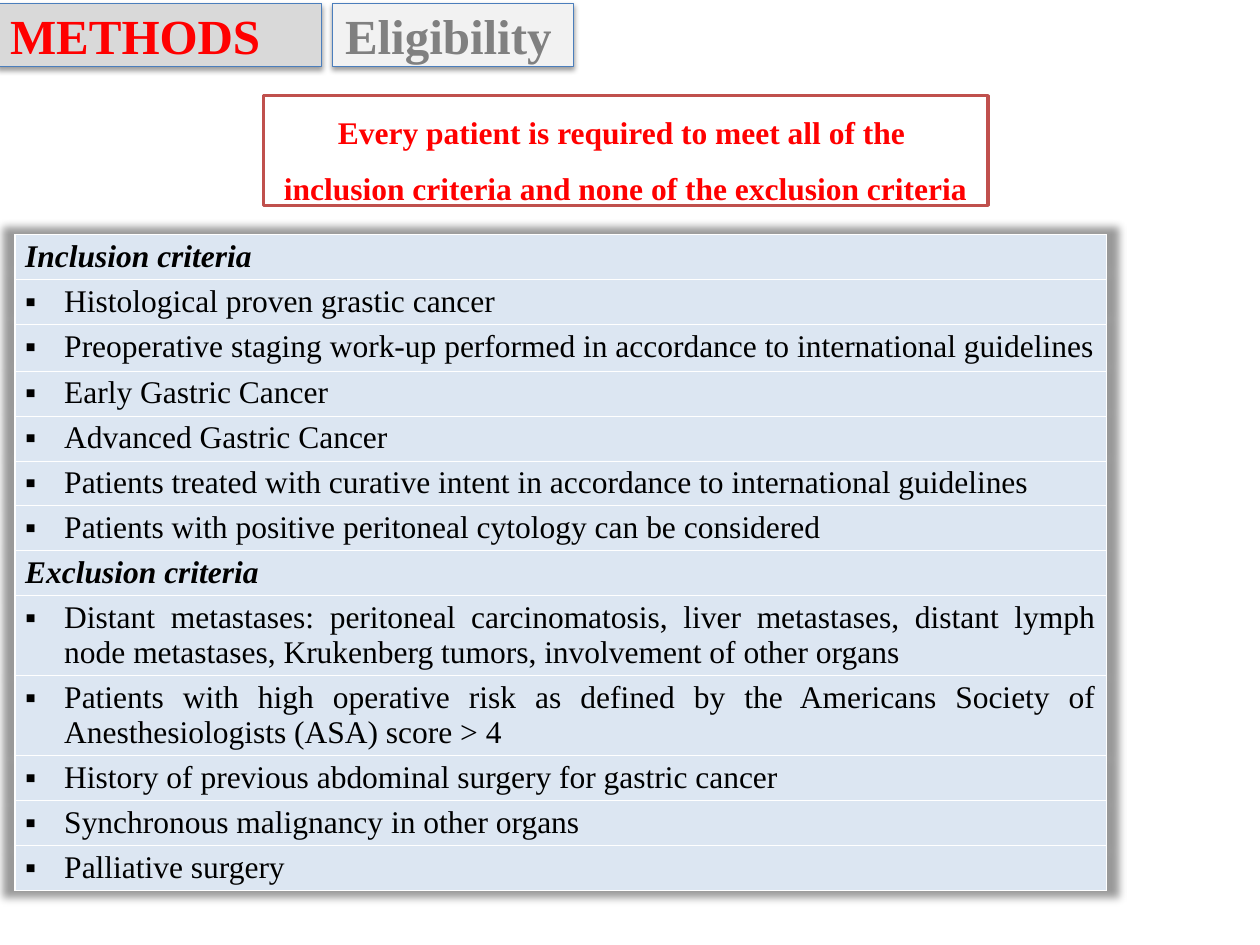
from lxml.etree import SubElement
from pptx import Presentation
from pptx.dml.color import RGBColor
from pptx.enum.shapes import MSO_SHAPE
from pptx.enum.text import MSO_ANCHOR, MSO_AUTO_SIZE, PP_ALIGN
from pptx.oxml import parse_xml
from pptx.oxml.ns import nsdecls, qn
from pptx.util import Pt

PX = 9144
FONT = "Times New Roman"
COLORS = {
    "white": "FFFFFF", "black": "000000", "red": "FF0000", "gray": "808080",
    "title": "D9D9D9", "tag": "F2F2F2", "edge": "4B7EBC", "notice": "C0504D", "cell": "DCE6F2",
}
INCLUSION = [
    "Histological proven grastic cancer",
    "Preoperative staging work-up performed in accordance to international guidelines",
    "Early Gastric Cancer",
    "Advanced Gastric Cancer",
    "Patients treated with curative intent in accordance to international guidelines",
    "Patients with positive peritoneal cytology can be considered",
]
EXCLUSION = [
    "Distant metastases: peritoneal carcinomatosis, liver metastases, distant lymph node metastases, "
    "Krukenberg tumors, involvement of other organs",
    "Patients with high operative risk as defined by the Americans Society of Anesthesiologists (ASA) score > 4",
    "History of previous abdominal surgery for gastric cancer",
    "Synchronous malignancy in other organs",
    "Palliative surgery",
]
CRITERIA = [
    (text, index == 0)
    for group in (["Inclusion criteria"] + INCLUSION, ["Exclusion criteria"] + EXCLUSION)
    for index, text in enumerate(group)
]
ROW_HEIGHTS = {2: 37, 8: 57, 9: 57}


def px(*values):
    return [value * PX for value in values]


def rgb(name):
    return RGBColor.from_string(COLORS[name])


def write(tf, text, size=18, color="black", bold=False, italic=False,
          align=PP_ALIGN.LEFT, spacing=None, bullet=None):
    for i, line in enumerate(text.split("\n")):
        p = tf.paragraphs[0] if i == 0 else tf.add_paragraph()
        p.alignment = align
        if spacing:
            p.line_spacing = spacing
        if bullet:
            pPr = p._p.get_or_add_pPr()
            pPr.set("marL", str(31 * PX))
            pPr.set("indent", str(-31 * PX))
            SubElement(pPr, qn("a:buFont"), typeface=FONT)
            SubElement(pPr, qn("a:buChar"), char=bullet)
        r = p.add_run()
        r.text = line
        r.font.name, r.font.size = FONT, Pt(size)
        r.font.bold, r.font.italic = bold, italic
        r.font.color.rgb = rgb(color)


def shadow(blur, alpha, extra):
    return parse_xml(
        f'<a:effectLst {nsdecls("a")}><a:outerShdw blurRad="{blur}" {extra} rotWithShape="0">'
        f'<a:srgbClr val="{COLORS["black"]}"><a:alpha val="{alpha}"/></a:srgbClr>'
        '</a:outerShdw></a:effectLst>')


class Deck:
    def __init__(self):
        self.prs = Presentation()
        self.prs.slide_width, self.prs.slide_height = px(1000, 750)
        self.s = self.prs.slides.add_slide(self.prs.slide_layouts[5])

    def style(self, sp, text, fill, line, width, raised, **fmt):
        sp.fill.solid()
        sp.fill.fore_color.rgb = rgb(fill)
        sp.line.color.rgb = rgb(line)
        sp.line.width = Pt(width)
        if raised:
            sp._element.spPr.append(shadow(Pt(3.1), 38000, f'dist="{Pt(1.6)}" dir="5400000"'))
        else:
            sp.shadow.inherit = False
        tf = sp.text_frame
        tf.word_wrap = True
        tf.auto_size = MSO_AUTO_SIZE.NONE
        tf.vertical_anchor = MSO_ANCHOR.MIDDLE
        write(tf, text, bold=True, **fmt)

    def title(self, box, text, fill, line, width=0.75, raised=True, **fmt):
        sp = self.s.shapes.title
        sp.left, sp.top, sp.width, sp.height = px(*box)
        self.style(sp, text, fill, line, width, raised, **fmt)

    def box(self, box, text, fill, line, width=0.75, raised=True, **fmt):
        sp = self.s.shapes.add_shape(MSO_SHAPE.RECTANGLE, *px(*box))
        self.style(sp, text, fill, line, width, raised, **fmt)

    def table(self, left, top, width, rows, heights, default):
        sizes = [heights.get(i, default) for i in range(len(rows))]
        frame = self.s.shapes.add_table(len(rows), 1, *px(left, top, width, sum(sizes)))
        table = frame.table
        table.first_row = table.horz_banding = False
        table._tbl.tblPr.insert(0, shadow(63500, 40000, 'sx="102000" sy="102000" algn="ctr"'))
        for i, (text, heading) in enumerate(rows):
            table.rows[i].height = sizes[i] * PX
            cell = table.cell(i, 0)
            cell.margin_left, cell.margin_right, cell.margin_top, cell.margin_bottom = px(8, 8, 4, 4)
            cell.fill.solid()
            cell.fill.fore_color.rgb = rgb("cell")
            for pos, side in enumerate(("lnT", "lnB")):
                cell._tc.get_or_add_tcPr().insert(pos, parse_xml(
                    f'<a:{side} {nsdecls("a")} w="{Pt(0.25)}"><a:solidFill>'
                    f'<a:srgbClr val="{COLORS["white"]}"/></a:solidFill></a:{side}>'))
            write(cell.text_frame, text, bold=heading, italic=heading,
                  align=PP_ALIGN.JUSTIFY, bullet=None if heading else "▪")


def main():
    deck = Deck()
    deck.table(12, 186, 866, CRITERIA, ROW_HEIGHTS, 32)
    deck.box((209, 76, 575, 87),
             "Every patient is required to meet all of the \ninclusion criteria and none of the exclusion criteria",
             "white", "notice", width=2, raised=False, color="red", align=PP_ALIGN.CENTER, spacing=1.5)
    deck.title((-2, 3, 257, 50), "METHODS", "title", "edge", size=28, color="red")
    deck.box((264, 3, 191, 50), "Eligibility", "tag", "edge", size=28, color="gray", align=PP_ALIGN.JUSTIFY)
    deck.prs.save("out.pptx")


if __name__ == "__main__":
    main()
